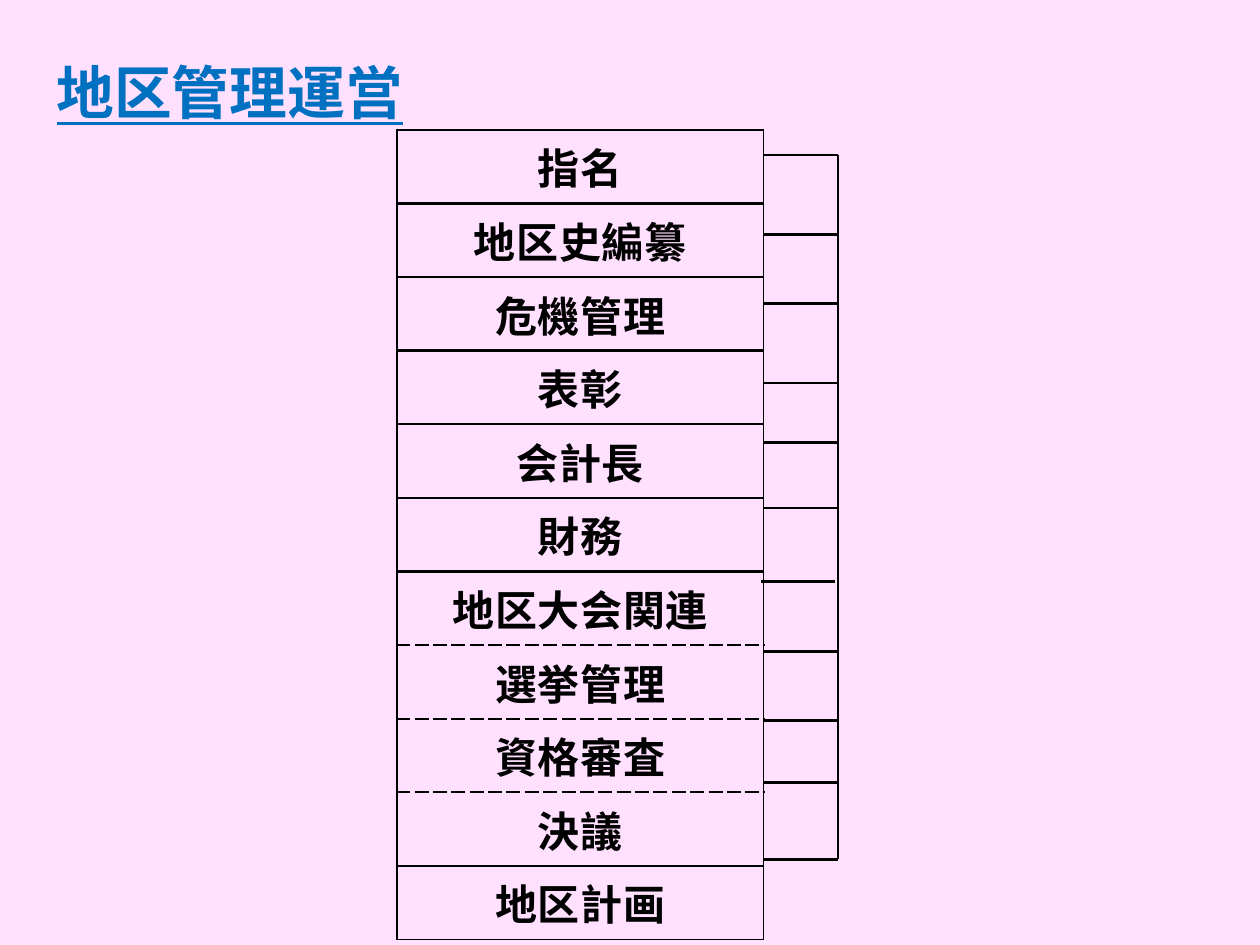
import pptx
import pptx.util
import pptx.dml.color
import pptx.enum.shapes
import pptx.enum.text
import pptx.oxml.ns
import lxml.etree

COLORS = {"background": "FFE1FF", "title": "0070C0", "ink": "000000"}
FONT = "Calibri"
WIDTH, HEIGHT = 10, 7.5
COMMITTEES = ["指名", "地区史編纂", "危機管理", "表彰", "会計長", "財務",
              "地区大会関連", "選挙管理", "資格審査", "決議", "地区計画"]
DASHED_BELOW = {6, 7, 8}

# Boxes are left, top, width, height in inches
TITLE_BOX = (0.35, 0.29, 9.21, 0.94)
TABLE_BOX = (3.15, 1.03, 2.91, 6.43)
BRACKET_BOX = (6.06, 1.23, 0.59, 5.59)
# Branch heights as shares of the bracket's height
BRANCHES = [0, 0.113, 0.211, 0.324, 0.408, 0.501, 0.606, 0.705, 0.803, 0.891, 1]
SHIFTED_BRANCH, SHIFT = 6, -0.02


def rgb(name):
    return pptx.dml.color.RGBColor.from_string(COLORS[name])


def inches(*lengths):
    return [pptx.util.Inches(length) for length in lengths]


def add_child(parent, tag, **attributes):
    return lxml.etree.SubElement(parent, pptx.oxml.ns.qn(tag), attributes)


def format_run(run, size, color):
    run.font.name = FONT
    run.font.size = pptx.util.Pt(size)
    run.font.bold = True
    run.font.color.rgb = rgb(color)


def add_title(slide, box):
    text_frame = slide.shapes.add_textbox(*inches(*box)).text_frame
    text_frame.word_wrap = True
    text_frame.vertical_anchor = pptx.enum.text.MSO_ANCHOR.MIDDLE
    text_frame.text = "地区管理運営"
    paragraph = text_frame.paragraphs[0]
    paragraph.line_spacing = 0.9
    format_run(paragraph.runs[0], 33, "title")
    paragraph.runs[0].font.underline = True


def set_border(cell, side, points, dash="solid"):
    line = add_child(cell._tc.get_or_add_tcPr(), f"a:ln{side}",
                     w=str(pptx.util.Pt(points)))
    fill = add_child(line, "a:solidFill")
    add_child(fill, "a:srgbClr", val=COLORS["ink"])
    add_child(line, "a:prstDash", val=dash)


def add_committee_table(slide, box):
    count = len(COMMITTEES)
    table = slide.shapes.add_table(count, 1, *inches(*box)).table
    table.first_row = False
    table.horz_banding = False
    for index, name in enumerate(COMMITTEES):
        table.rows[index].height = pptx.util.Inches(box[3] / count)
        cell = table.cell(index, 0)
        cell.text = name
        cell.vertical_anchor = pptx.enum.text.MSO_ANCHOR.MIDDLE
        cell.margin_bottom = pptx.util.Inches(0.08)
        paragraph = cell.text_frame.paragraphs[0]
        paragraph.alignment = pptx.enum.text.PP_ALIGN.CENTER
        run = paragraph.runs[0]
        format_run(run, 24, "ink")
        run.font._element.set("spc", "40")
        for side in "LR":
            set_border(cell, side, 1)
        for side, edge in (("T", index - 1), ("B", index)):
            outer = edge in (-1, count - 1)
            dash = "sysDash" if edge in DASHED_BELOW else "solid"
            set_border(cell, side, 1 if outer else 1.5, dash)
        cell.fill.background()


def add_line(slide, *ends):
    line = slide.shapes.add_connector(
        pptx.enum.shapes.MSO_CONNECTOR.STRAIGHT, *inches(*ends))
    line.line.color.rgb = rgb("ink")
    line.line.width = pptx.util.Pt(1.5)
    add_child(line._element.spPr, "a:effectLst")


def add_bracket(slide, box):
    """Draw a vertical trunk with a branch to the table for each share."""
    left, top, width, height = box
    right = left + width
    add_line(slide, right, top, right, top + height)
    for index, share in enumerate(BRANCHES):
        shift = SHIFT if index == SHIFTED_BRANCH else 0
        y = top + share * height
        add_line(slide, left + shift, y, right + shift, y)


def main():
    presentation = pptx.Presentation()
    presentation.slide_width, presentation.slide_height = inches(WIDTH, HEIGHT)
    slide = presentation.slides.add_slide(presentation.slide_layouts[6])
    slide.background.fill.solid()
    slide.background.fill.fore_color.rgb = rgb("background")
    add_title(slide, TITLE_BOX)
    add_committee_table(slide, TABLE_BOX)
    add_bracket(slide, BRACKET_BOX)
    presentation.save("out.pptx")


if __name__ == "__main__":
    main()
